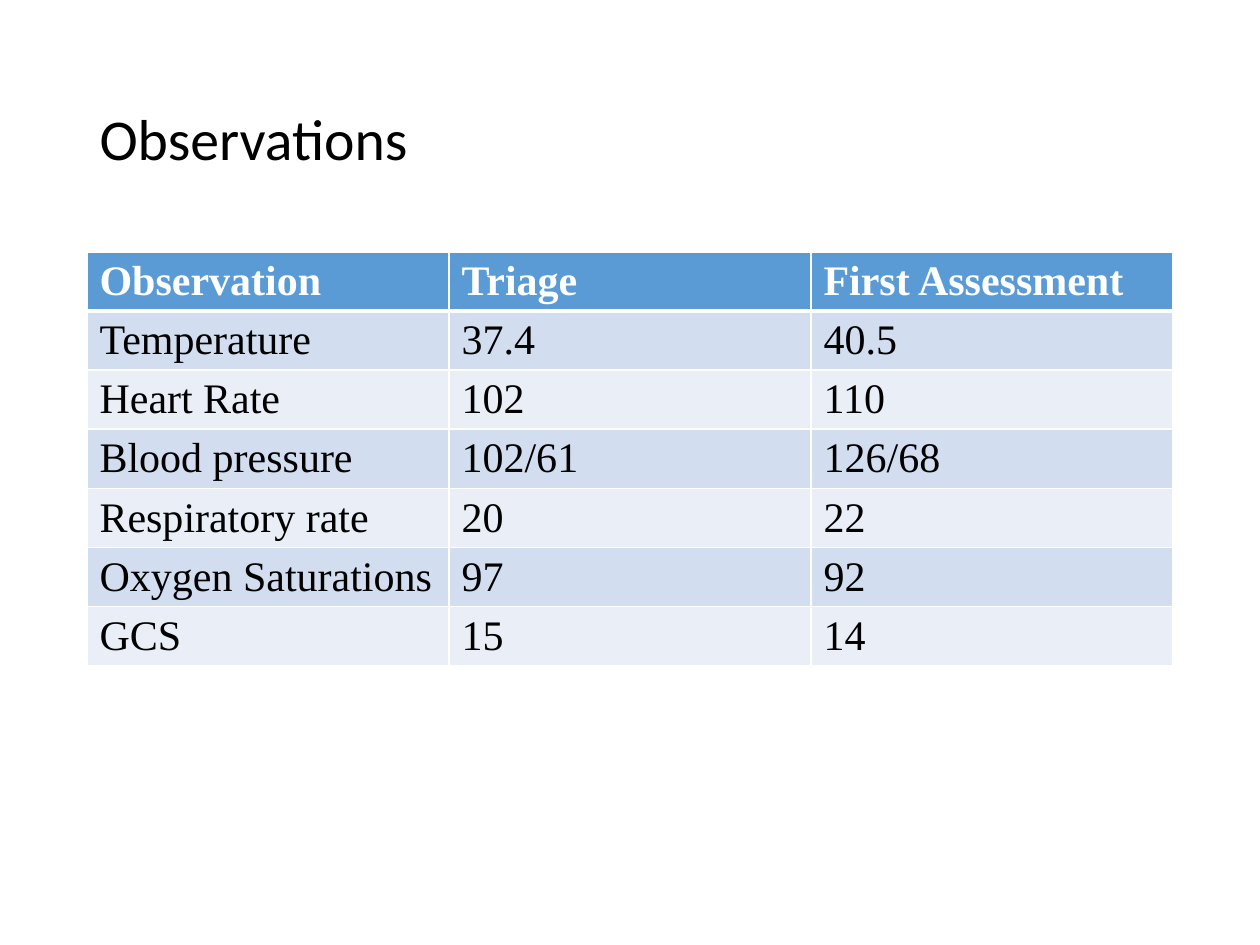
from lxml.etree import SubElement
from pptx import Presentation
from pptx.dml.color import RGBColor
from pptx.enum.text import MSO_ANCHOR, PP_ALIGN
from pptx.oxml.ns import qn
from pptx.util import Inches, Pt

WHITE = RGBColor(0xFF, 0xFF, 0xFF)
BLACK = RGBColor(0, 0, 0)
HEADER = RGBColor(0x5B, 0x9B, 0xD5)
BANDS = (RGBColor(0xEA, 0xEF, 0xF7), RGBColor(0xD2, 0xDE, 0xEF))

ROWS = [
    ("Observation", "Triage", "First Assessment"),
    ("Temperature", "37.4", "40.5"),
    ("Heart Rate", "102", "110"),
    ("Blood pressure", "102/61", "126/68"),
    ("Respiratory rate", "20", "22"),
    ("Oxygen Saturations", "97", "92"),
    ("GCS", "15", "14"),
]


def write(tf, text, *, size, font, color=BLACK, bold=False, spacing=None):
    p = tf.paragraphs[0]
    p.alignment = PP_ALIGN.LEFT
    p.line_spacing = spacing
    r = p.add_run()
    r.text = text
    r.font.size = Pt(size)
    r.font.name = font
    r.font.bold = bold
    r.font.color.rgb = color


def add_borders(cell, **widths):
    """Draw white cell edges; L, R, T and B are widths in points."""
    tc_pr = cell._tc.get_or_add_tcPr()
    for side in "LRTB":
        ln = SubElement(tc_pr, qn(f"a:ln{side}"), w=str(Pt(widths.get(side, 1))))
        fill = SubElement(ln, qn("a:solidFill"))
        SubElement(fill, qn("a:srgbClr"), val=str(WHITE))


def add_title(s, text, left, top, width, height):
    sp = s.shapes.title
    sp.left, sp.top, sp.width, sp.height = left, top, width, height
    tf = sp.text_frame
    tf.word_wrap = True
    tf.vertical_anchor = MSO_ANCHOR.MIDDLE
    write(tf, text, size=33, font="Calibri", spacing=0.9)


def add_observations(s, rows, left, top, width, height):
    frame = s.shapes.add_table(len(rows), len(rows[0]), left, top, width, height)
    for i, row in enumerate(rows):
        is_header = i == 0
        # The heavier rule runs between the header and the first row
        heavy = {0: {"B": 3}, 1: {"T": 3}}.get(i, {})
        for j, text in enumerate(row):
            cell = frame.table.cell(i, j)
            add_borders(cell, **heavy)
            cell.fill.solid()
            cell.fill.fore_color.rgb = HEADER if is_header else BANDS[i % 2]
            write(cell.text_frame, text, size=24, font="Times New Roman",
                  color=WHITE if is_header else BLACK, bold=is_header)


def main():
    prs = Presentation()
    prs.slide_width, prs.slide_height = Inches(10), Inches(7.5)
    s = prs.slides.add_slide(prs.slide_layouts[5])  # title only
    left, width = Inches(0.69), Inches(8.62)
    add_title(s, "Observations", left, Inches(0.4), width, Inches(1.45))
    add_observations(s, ROWS, left, Inches(2), width, Inches(0.41) * len(ROWS))
    prs.save("out.pptx")


if __name__ == "__main__":
    main()
